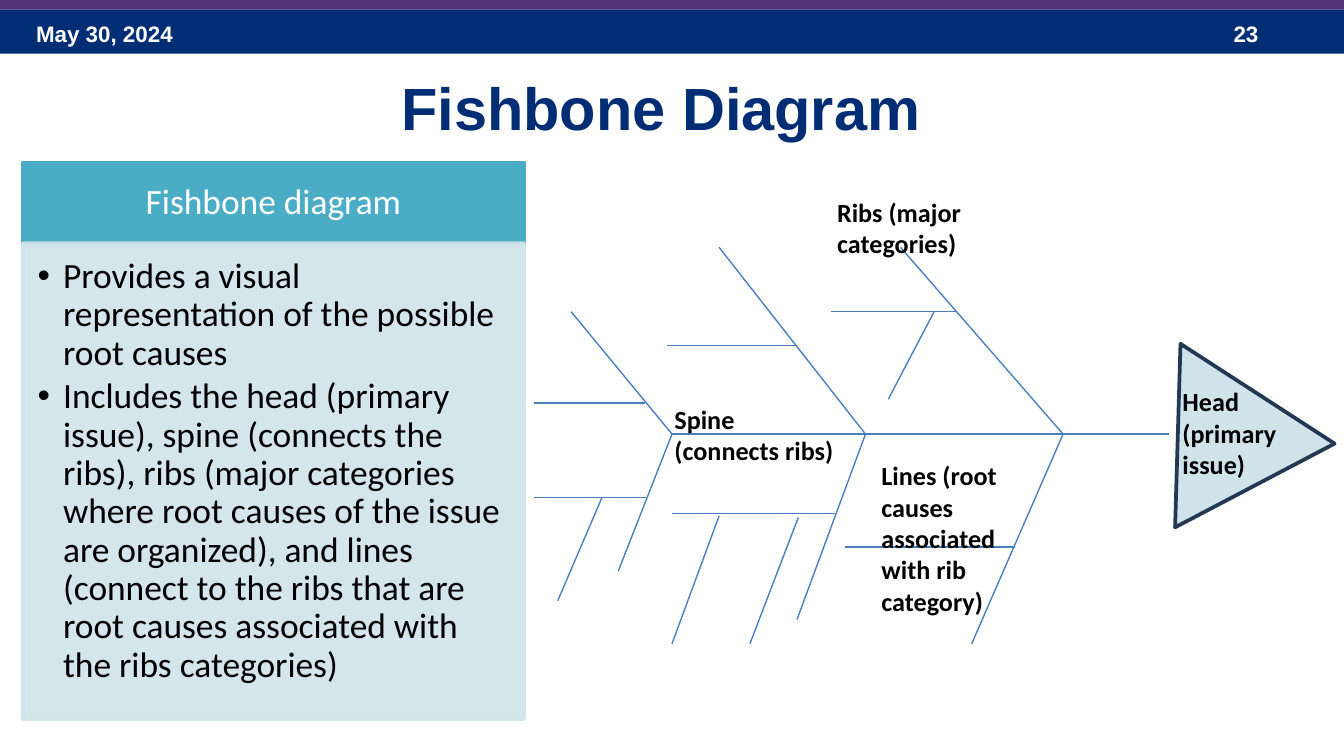
from lxml import etree
from pptx import Presentation
from pptx import util as u
from pptx.dml.color import RGBColor
from pptx.enum import shapes, text
from pptx.oxml.ns import qn

THEME = {
    "navy": "002D73", "purple": "553278", "teal": "4BACC6", "pale": "D0E3EA",
    "bone": "4B7EBC", "outline": "233953", "white": "FFFFFF", "black": "000000",
    "heading_font": "Arial", "body_font": "Calibri",
    "title": 31.9, "body": 19, "label": 14, "bar": 12,
}
WIDTH = 10
HEIGHT = WIDTH * 9 / 16
MARGIN = 0.17

# Banner text: words, left, width
BANNER = [("May 30, 2024", MARGIN, 2.33), ("23", 9.08, 0.75)]
TITLE = "Fishbone Diagram"
PANEL_TITLE = "Fishbone diagram"
PANEL_POINTS = [
    "Provides a visual representation of the possible root causes",
    "Includes the head (primary issue), spine (connects the ribs), ribs (major "
    "categories where root causes of the issue are organized), and lines "
    "(connect to the ribs that are root causes associated with the ribs categories)",
]
PANEL_TOP, PANEL_SPLIT, PANEL_BOTTOM, PANEL_WIDTH = 1.21, 1.81, 5.35, 3.73

SPINE_Y, SPINE_START, SPINE_END = 3.23, 5, 8.7
# Ribs: joint on the spine, upper tip, lower tip
RIBS = [
    (5, (4.25, 2.32), (4.6, 4.25)),
    (6.44, (5.35, 1.84), (5.93, 4.61)),
    (7.91, (6.7, 1.84), (7.23, 4.79)),
]
# Level cause lines: height, rib end, free end
CAUSES = [
    (3, 4.8, 3.97), (3.7, 4.81, 3.97), (2.57, 5.93, 4.96),
    (3.82, 6.21, 5), (2.32, 7.11, 6.18), (4.07, 7.55, 6.29),
]
# Slanted lines hanging from the cause lines
TWIGS = [
    ((5.35, 3.84), (5, 4.79)), ((5.94, 3.85), (5.58, 4.79)),
    ((6.95, 2.32), (6.61, 2.97)), ((4.48, 3.7), (4.15, 4.47)),
]
HEAD_BOX, HEAD_TURN = (8.39, 2.49, 1.34, 1.19), 332.3
LABELS = [
    ("Head (primary issue)", (8.7, 2.82, 0.9, 0.81)),
    ("Ribs (major categories)", (6.13, 1.41, 1.19, 0.57)),
    ("Spine (connects ribs)", (4.92, 2.95, 1.43, 0.57)),
    ("Lines (root causes associated with rib category)", (6.46, 3.37, 1.2, 1.28)),
]


def inches(values):
    return [u.Inches(value) for value in values]


def color(name):
    return RGBColor.from_string(THEME[name])


def add_block(slide, kind, box, fill, line=None):
    block = slide.shapes.add_shape(kind, *inches(box))
    block.shadow.inherit = False
    block.fill.solid()
    block.fill.fore_color.rgb = color(fill)
    if line:
        block.line.color.rgb = color(line)
        block.line.width = u.Pt(2)
    else:
        block.line.fill.background()
    return block


def set_opacity(shape, percent):
    """Make both the fill and the line partly transparent."""
    for tone in shape._element.spPr.iter(qn("a:srgbClr")):
        etree.SubElement(tone, qn("a:alpha"), val=str(percent * 1000))


def add_bullet(para, indent):
    props = para._p.get_or_add_pPr()
    props.set("marL", str(u.Inches(indent)))
    props.set("indent", str(-u.Inches(indent)))
    etree.SubElement(props, qn("a:buFont"), typeface=THEME["heading_font"])
    etree.SubElement(props, qn("a:buChar"), char="•")


def write(shape, lines, font, size, ink, bold=False, align=text.PP_ALIGN.LEFT,
          anchor=text.MSO_ANCHOR.TOP, insets=(0.1, 0.05, 0.1, 0.05),
          spacing=None, after=0, bullet_indent=0):
    frame = shape.text_frame
    frame.word_wrap = True
    frame.vertical_anchor = anchor
    (frame.margin_left, frame.margin_top,
     frame.margin_right, frame.margin_bottom) = inches(insets)
    frame.text = "\n".join(lines)
    for para in frame.paragraphs:
        para.alignment = align
        para.line_spacing = spacing
        para.space_after = u.Pt(after)
        if bullet_indent:
            add_bullet(para, bullet_indent)
        for span in para.runs:
            span.font.name = THEME[font]
            span.font.size = u.Pt(THEME[size])
            span.font.bold = bold
            span.font.color.rgb = color(ink)


def add_text(slide, words, box, *style, **options):
    write(slide.shapes.add_textbox(*inches(box)), [words], *style, **options)


def add_bone(slide, start, end):
    bone = slide.shapes.add_connector(
        shapes.MSO_CONNECTOR.STRAIGHT, *inches((*start, *end)))
    bone.line.color.rgb = color("bone")
    bone.line.width = u.Pt(0.75)
    etree.SubElement(bone._element.spPr, qn("a:effectLst"))


def add_banner(slide):
    rectangle = shapes.MSO_SHAPE.RECTANGLE
    add_block(slide, rectangle, (0, 0.07, WIDTH, 0.33), "navy")
    add_block(slide, rectangle, (0, -0.02, WIDTH, 0.09), "purple")
    for words, left, width in BANNER:
        add_text(slide, words, (left, 0.1, width, 0.3),
                 "heading_font", "bar", "white", bold=True)
    add_text(slide, TITLE, (MARGIN, 0.48, 9.5, 0.7), "heading_font", "title", "navy",
             bold=True, align=text.PP_ALIGN.CENTER)


def add_panel(slide):
    rectangle = shapes.MSO_SHAPE.RECTANGLE
    header = add_block(slide, rectangle,
                       (MARGIN, PANEL_TOP, PANEL_WIDTH, PANEL_SPLIT - PANEL_TOP),
                       "teal", "teal")
    write(header, [PANEL_TITLE], "body_font", "body", "white",
          align=text.PP_ALIGN.CENTER, anchor=text.MSO_ANCHOR.MIDDLE,
          insets=(0.15, 0.08, 0.15, 0.08), spacing=0.9)
    body = add_block(slide, rectangle,
                     (MARGIN, PANEL_SPLIT, PANEL_WIDTH, PANEL_BOTTOM - PANEL_SPLIT),
                     "pale", "pale")
    set_opacity(body, 90)
    write(body, PANEL_POINTS, "body_font", "body", "black",
          insets=(0.11, 0.11, 0.15, 0.17), spacing=0.9,
          after=0.15 * THEME["body"], bullet_indent=0.19)


def add_fishbone(slide):
    head = add_block(slide, shapes.MSO_SHAPE.ISOSCELES_TRIANGLE, HEAD_BOX,
                     "pale", "outline")
    head.rotation = HEAD_TURN
    add_bone(slide, (SPINE_START, SPINE_Y), (SPINE_END, SPINE_Y))
    for joint, *tips in RIBS:
        for tip in tips:
            add_bone(slide, (joint, SPINE_Y), tip)
    for height, rib_end, free_end in CAUSES:
        add_bone(slide, (rib_end, height), (free_end, height))
    for start, end in TWIGS:
        add_bone(slide, start, end)
    for words, box in LABELS:
        add_text(slide, words, box, "body_font", "label", "black", bold=True)


def main():
    deck = Presentation()
    deck.slide_width, deck.slide_height = inches((WIDTH, HEIGHT))
    slide = deck.slides.add_slide(deck.slide_layouts[6])
    add_banner(slide)
    add_panel(slide)
    add_fishbone(slide)
    deck.save("out.pptx")


if __name__ == "__main__":
    main()
